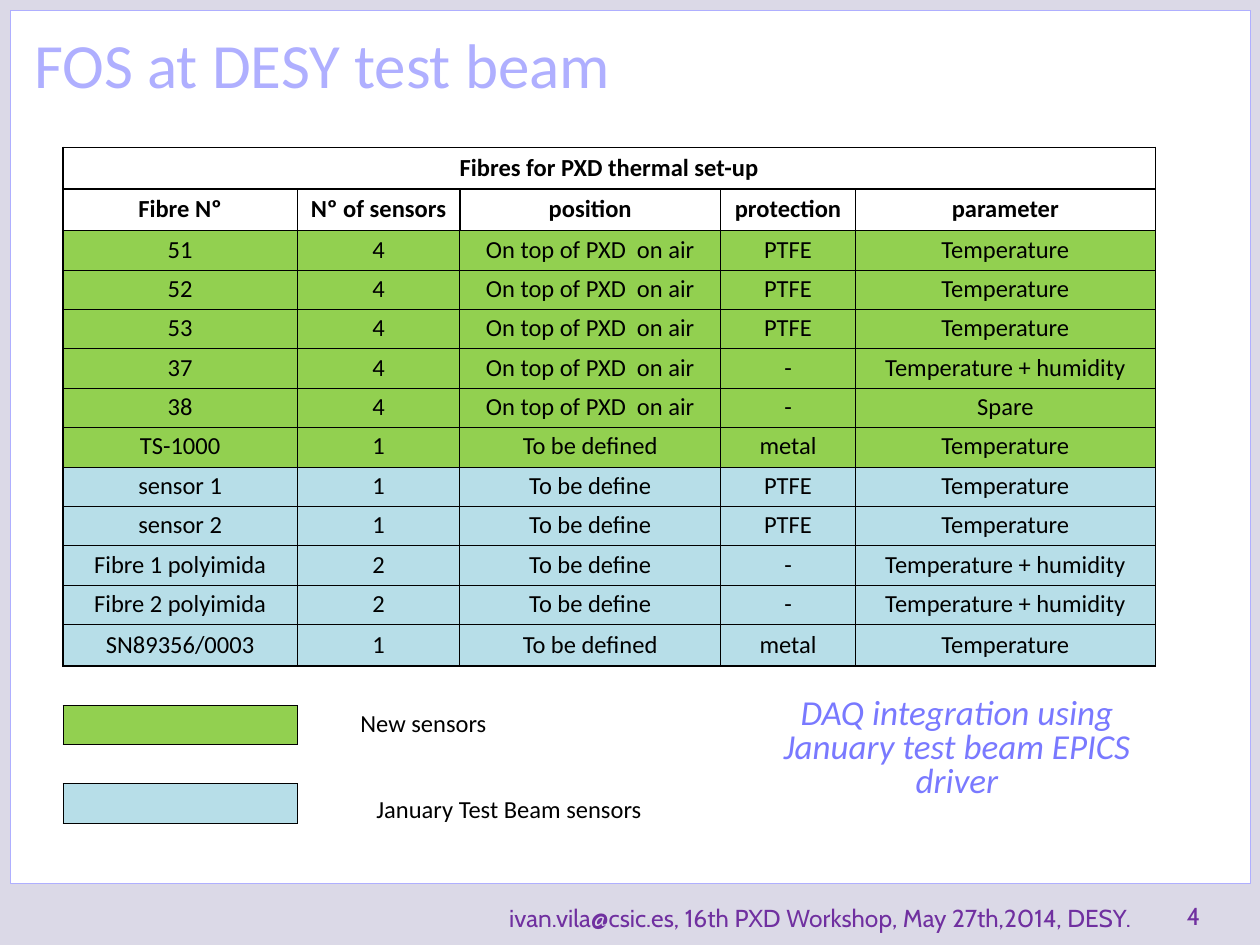
"""Build the slide that lists the fibre sensors for the DESY test beam."""
import pptx
import pptx.dml.color
import pptx.enum.shapes
import pptx.enum.text
import pptx.oxml
import pptx.oxml.ns
import pptx.util

RGBColor = pptx.dml.color.RGBColor
LAVENDER_GREY = RGBColor(0xDB, 0xD9, 0xE7)
LAVENDER = RGBColor(0xAF, 0xAF, 0xFF)
VIOLET = RGBColor(0x79, 0x79, 0xFF)
PURPLE = RGBColor(0x70, 0x30, 0xA0)
WHITE = RGBColor(0xFF, 0xFF, 0xFF)
BLACK = RGBColor(0x00, 0x00, 0x00)
GREEN = RGBColor(0x92, 0xD0, 0x50)
BLUE = RGBColor(0xB7, 0xDE, 0xE8)

LEFT, CENTER, RIGHT = (pptx.enum.text.PP_ALIGN.LEFT, pptx.enum.text.PP_ALIGN.CENTER,
                       pptx.enum.text.PP_ALIGN.RIGHT)
TOP, MIDDLE, BOTTOM = (pptx.enum.text.MSO_ANCHOR.TOP, pptx.enum.text.MSO_ANCHOR.MIDDLE,
                       pptx.enum.text.MSO_ANCHOR.BOTTOM)

HEADINGS = ["Fibre Nº", "Nº of sensors", "position", "protection", "parameter"]
NEW_SENSORS = [
    ["51", "4", "On top of PXD  on air", "PTFE", "Temperature"],
    ["52", "4", "On top of PXD  on air", "PTFE", "Temperature"],
    ["53", "4", "On top of PXD  on air", "PTFE", "Temperature"],
    ["37", "4", "On top of PXD  on air", "-", "Temperature + humidity"],
    ["38", "4", "On top of PXD  on air", "-", "Spare"],
    ["TS-1000", "1", "To be defined", "metal", "Temperature"],
]
JANUARY_SENSORS = [
    ["sensor 1", "1", "To be define", "PTFE", "Temperature"],
    ["sensor 2", "1", "To be define", "PTFE", "Temperature"],
    ["Fibre 1 polyimida", "2", "To be define", "-", "Temperature + humidity"],
    ["Fibre 2 polyimida", "2", "To be define", "-", "Temperature + humidity"],
    ["SN89356/0003", "1", "To be defined", "metal", "Temperature"],
]


def write_text(frame, text, font="Calibri", size=14, color=BLACK, bold=False,
               italic=False, align=LEFT, spacing=1.0):
    frame.word_wrap = True
    paragraph = frame.paragraphs[0]
    paragraph.alignment = align
    paragraph.line_spacing = spacing
    if text:
        run = paragraph.add_run()
        run.text = text
        run.font.name = font
        run.font.size = pptx.util.Pt(size)
        run.font.bold = bold
        run.font.italic = italic
        run.font.color.rgb = color


def draw_borders(cell, **widths):
    properties = cell._tc.get_or_add_tcPr()
    for side, width in widths.items():
        properties.append(pptx.oxml.parse_xml(
            f'<a:ln{side} {pptx.oxml.ns.nsdecls("a")} w="{pptx.util.Pt(width)}">'
            f'<a:solidFill><a:srgbClr val="{BLACK}"/></a:solidFill></a:ln{side}>'))


presentation = pptx.Presentation()
presentation.slide_width = pptx.util.Inches(10)
presentation.slide_height = pptx.util.Inches(7.5)
COLUMN = presentation.slide_width / 100
ROW = presentation.slide_height / 100

slide = presentation.slides.add_slide(presentation.slide_layouts[5])
slide.background.fill.solid()
slide.background.fill.fore_color.rgb = LAVENDER_GREY

panel = slide.shapes.add_shape(
    pptx.enum.shapes.MSO_SHAPE.RECTANGLE,
    int(0.8 * COLUMN), int(1.07 * ROW), int(98.4 * COLUMN), int(92.4 * ROW))
panel.shadow.inherit = False
panel.fill.solid()
panel.fill.fore_color.rgb = WHITE
panel.line.color.rgb = LAVENDER
panel.line.width = pptx.util.Pt(0.25)
slide.shapes._spTree.insert(2, panel._element)

title = slide.shapes.title
title.left, title.top = int(1.7 * COLUMN), int(2 * ROW)
title.width, title.height = int(77.5 * COLUMN), int(16.8 * ROW)
title.text_frame.vertical_anchor = TOP
write_text(title.text_frame, "FOS at DESY test beam", size=36, color=LAVENDER)

footer_format = dict(font="Cabin", color=PURPLE)
remark_format = dict(size=20, color=VIOLET, italic=True, align=CENTER, spacing=0.8)
for text, left, top, width, height, anchor, text_format in [
    ("4", 93.2, 92.4, 5.8, 6.67, BOTTOM, footer_format),
    ("ivan.vila@csic.es, 16th PXD Workshop, May 27th,2014, DESY.",
     18.3, 92.67, 72.5, 6.67, BOTTOM, dict(footer_format, align=RIGHT)),
    ("DAQ integration using January test beam EPICS driver",
     60, 73.33, 31.9, 16.67, TOP, remark_format),
]:
    box = slide.shapes.add_textbox(
        int(left * COLUMN), int(top * ROW), int(width * COLUMN), int(height * ROW))
    box.text_frame.vertical_anchor = anchor
    write_text(box.text_frame, text, **text_format)

blank = [""] * 5
records = [["Fibres for PXD thermal set-up"] + blank[1:], HEADINGS,
           *NEW_SENSORS, *JANUARY_SENSORS,
           blank, ["", "New sensors"] + blank[2:],
           blank, ["", "January Test Beam sensors"] + blank[2:]]
first_new = 2
first_january = first_new + len(NEW_SENSORS)
last_sensor = first_january + len(JANUARY_SENSORS) - 1
new_key, january_key = last_sensor + 2, last_sensor + 4

column_widths = [18.6, 12.9, 20.7, 10.7, 23.8]
row_heights = [4.17] * len(records)
for index in (0, 1, last_sensor):
    row_heights[index] = 4.4
row_heights[new_key + 1] = 3.87

table = slide.shapes.add_table(
    len(records), len(column_widths), int(5 * COLUMN), int(15.6 * ROW),
    int(sum(column_widths) * COLUMN), int(sum(row_heights) * ROW)).table
table.first_row = table.horz_banding = False
style = table._tbl.tblPr.find(pptx.oxml.ns.qn("a:tableStyleId"))
style.text = "{2D5ABB26-0587-4C30-8999-92F81FD0307C}"
for column, width in zip(table.columns, column_widths):
    column.width = int(width * COLUMN)
for row, height in zip(table.rows, row_heights):
    row.height = int(height * ROW)

table.cell(0, 0).merge(table.cell(0, 4))
for key in (new_key, january_key):
    table.cell(key, 1).merge(table.cell(key, 2))

for r, record in enumerate(records):
    heading = r < first_new
    for c, text in enumerate(record):
        cell = table.cell(r, c)
        cell.margin_left = cell.margin_right = cell.margin_top = pptx.util.Inches(0.01)
        cell.margin_bottom = 0
        cell.vertical_anchor = BOTTOM if r == january_key else MIDDLE
        if r == new_key and c == 1:
            cell.margin_left = int(5 * COLUMN)
        write_text(cell.text_frame, text, bold=heading, spacing=0.8,
                   align=LEFT if r == new_key else CENTER)
        if r <= last_sensor:
            draw_borders(cell, L=1 if heading or c == 0 else 0.5,
                         R=1 if heading or c == 4 else 0.5,
                         T=1 if r <= first_new else 0.5,
                         B=1 if heading or r == last_sensor else 0.5)
        elif c == 0 and r in (new_key, january_key):
            draw_borders(cell, L=0.5, R=0.5, T=0.5, B=0.5)
        if first_new <= r < first_january or (r, c) == (new_key, 0):
            cell.fill.solid()
            cell.fill.fore_color.rgb = GREEN
        elif first_january <= r <= last_sensor or (r, c) == (january_key, 0):
            cell.fill.solid()
            cell.fill.fore_color.rgb = BLUE
        else:
            cell.fill.background()

presentation.save("out.pptx")
